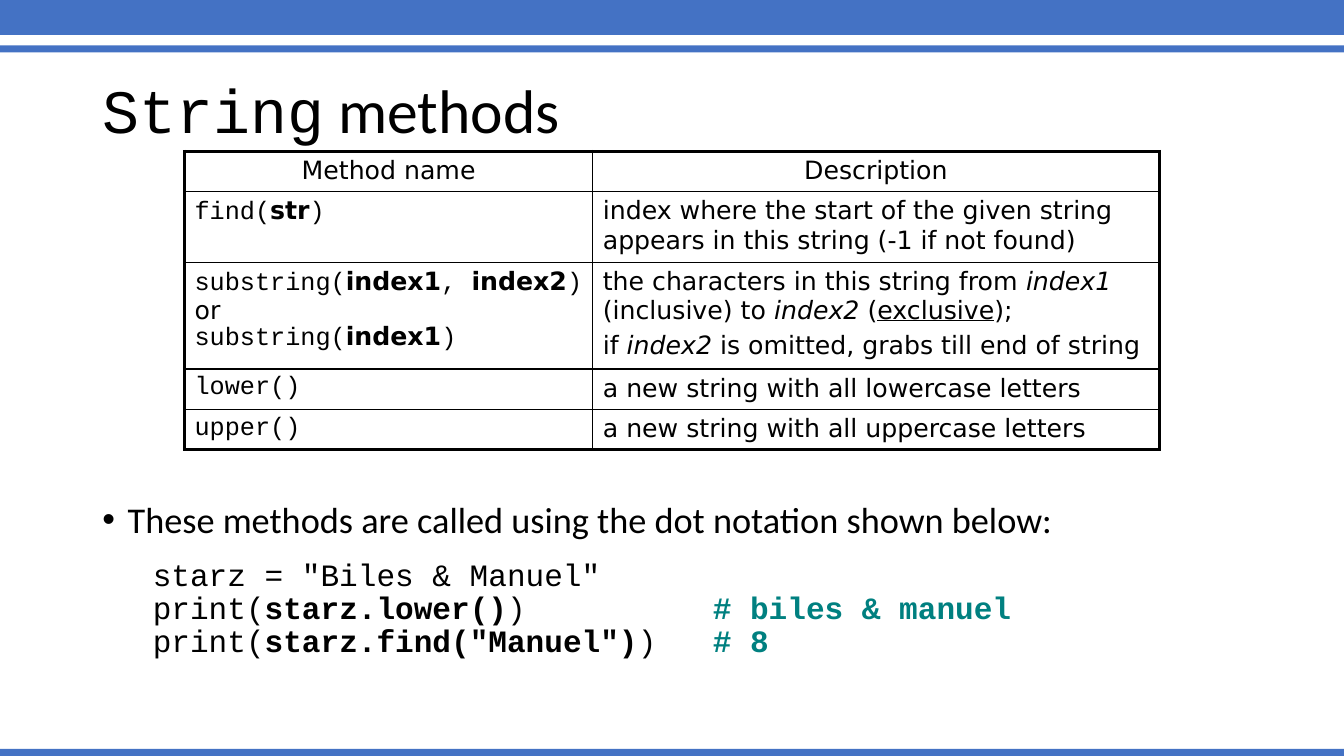
import pptx
import pptx.util
import pptx.dml.color
import pptx.enum.text
import pptx.enum.shapes
import lxml.etree

Pt = pptx.util.Pt
ALIGN = pptx.enum.text.PP_ALIGN
ANCHOR = pptx.enum.text.MSO_ANCHOR
HEX = {"bar": "4472C4", "text": "000000", "note": "008080"}
MONO, SANS, BODY = "Courier New", "DejaVu Sans", "Calibri"
WIDE, HIGH = 960, 540

# Each line is a list of (text, style); styles: m mono, b bold, i italic, u underline, n note
ROWS = [
    ([[("Method name", "")]], [[("Description", "")]]),
    ([[("find(", "m"), ("str", "b"), (")", "m")]],
     [[("index where the start of the given string appears in this string (-1 if not found)", "")]]),
    ([[("substring(", "m"), ("index1", "b"), (", ", "m"), ("index2", "b"), (")", "m")],
      [("or", "")],
      [("substring(", "m"), ("index1", "b"), (")", "m")]],
     [[("the characters in this string from ", ""), ("index1", "i"), (" (inclusive) to ", ""),
       ("index2", "i"), (" (", ""), ("exclusive", "u"), (");", "")],
      [("if ", ""), ("index2", "i"), (" is omitted, grabs till end of string", "")]]),
    ([[("lower()", "m")]], [[("a new string with all lowercase letters", "")]]),
    ([[("upper()", "m")]], [[("a new string with all uppercase letters", "")]]),
]
CODE = [
    [("starz = \"Biles & Manuel\"", "")],
    [("print(", ""), ("starz.lower()", "b"), (")\t", ""), ("# biles & manuel", "bn")],
    [("print(", ""), ("starz.find(\"Manuel\")", "b"), (")\t", ""), ("# 8", "bn")],
]


def color(name):
    return pptx.dml.color.RGBColor.from_string(HEX[name])


def node(parent, tag, **attrs):
    return lxml.etree.SubElement(parent, pptx.oxml.ns.qn(tag), attrs)


def write(para, runs, font, size):
    para.font.name = font
    para.font.size = Pt(size)
    para.font.color.rgb = color("text")
    for text, style in runs:
        run = para.add_run()
        run.text = text
        if "m" in style:
            run.font.name = MONO
        if "b" in style:
            run.font.bold = True
        if "i" in style:
            run.font.italic = True
        if "u" in style:
            run.font.underline = True
        if "n" in style:
            run.font.color.rgb = color("note")


def fill(frame, lines, font, size):
    paras = []
    for num, runs in enumerate(lines):
        para = frame.add_paragraph() if num else frame.paragraphs[0]
        write(para, runs, font, size)
        paras.append(para)
    return paras


def frame(slide, box):
    area = slide.shapes.add_textbox(*map(Pt, box)).text_frame
    area.word_wrap = True
    area.margin_left = area.margin_right = 0
    area.margin_top = area.margin_bottom = 0
    return area


# Bars along the top and bottom edges
def bars(slide, box):
    left, top, width, height = box
    for start, tall in ((-2, 27), (32.4, 5), (height - 5, 5)):
        bar = slide.shapes.add_shape(pptx.enum.shapes.MSO_SHAPE.RECTANGLE,
                                     Pt(left), Pt(top + start), Pt(width), Pt(tall))
        bar.shadow.inherit = False
        bar.fill.solid()
        bar.fill.fore_color.rgb = color("bar")
        bar.line.fill.background()


# Title
def title(slide, box):
    area = frame(slide, box)
    area.vertical_anchor = ANCHOR.MIDDLE
    para = fill(area, [[("String", "m"), (" methods", "")]], BODY, 44)[0]
    para.line_spacing = 0.9


def edge(cell, sides):
    props = cell._tc.get_or_add_tcPr()
    for num, (side, width) in enumerate(sides):
        line = lxml.etree.Element(pptx.oxml.ns.qn("a:" + side), w=str(Pt(width)))
        node(node(line, "a:solidFill"), "a:srgbClr", val=HEX["text"])
        props.insert(num, line)


# Table of methods
def methods(slide, box):
    shape = slide.shapes.add_table(len(ROWS), 2, *map(Pt, box))
    grid = shape.table
    grid.first_row = grid.horz_banding = False
    for col, width in zip(grid.columns, (291.6, 404.6)):
        col.width = Pt(width)
    for row, height in zip(grid.rows, (28.8, 50.4, 76.3, 28.8, 28.8)):
        row.height = Pt(height)
    last = len(ROWS) - 1
    for r, row in enumerate(ROWS):
        for c, lines in enumerate(row):
            cell = grid.cell(r, c)
            cell.fill.background()
            cell.margin_left = cell.margin_right = Pt(7.2)
            cell.margin_top = cell.margin_bottom = Pt(3.6)
            for num, para in enumerate(fill(cell.text_frame, lines, SANS, 18)):
                para.alignment = ALIGN.LEFT if r else ALIGN.CENTER
                if num:
                    para.space_before = Pt(3.6)
                    if c == 0:
                        para.line_spacing = 0.7
            outer = (("lnL", c == 0), ("lnR", c == 1), ("lnT", r == 0), ("lnB", r == last))
            edge(cell, [(side, 2.25 if out else 1) for side, out in outer])


# Bullet that leads into the code
def lead(slide, box):
    text = "These methods are called using the dot notation shown below:"
    para = fill(frame(slide, box), [[(text, "")]], BODY, 25.9)[0]
    props = para._p.get_or_add_pPr()
    props.set("marL", str(Pt(18)))
    props.set("indent", str(Pt(-18)))
    for num, (tag, key, val) in enumerate((("a:buFont", "typeface", "Arial"),
                                           ("a:buChar", "char", "•"))):
        props.insert(num, lxml.etree.Element(pptx.oxml.ns.qn(tag), {key: val}))


# Code lines, with notes lined up at a tab stop
def code(slide, box):
    for para in fill(frame(slide, box), CODE, MONO, 22.2):
        para.line_spacing = Pt(23.6)
        props = para._p.get_or_add_pPr()
        tabs = lxml.etree.Element(pptx.oxml.ns.qn("a:tabLst"))
        node(tabs, "a:tab", pos=str(Pt(400)), algn="l")
        props.find(pptx.oxml.ns.qn("a:defRPr")).addprevious(tabs)


def main():
    deck = pptx.Presentation()
    deck.slide_width, deck.slide_height = Pt(WIDE), Pt(HIGH)
    slide = deck.slides.add_slide(deck.slide_layouts[6])
    bars(slide, (0, 0, WIDE, HIGH))
    title(slide, (73.2, 28.8, 813.6, 104.4))
    methods(slide, (131.8, 108, 696.2, 213.1))
    lead(slide, (73.2, 355, 813.6, 32))
    code(slide, (109.2, 400, 777.6, 72))
    deck.save("out.pptx")


if __name__ == "__main__":
    main()
